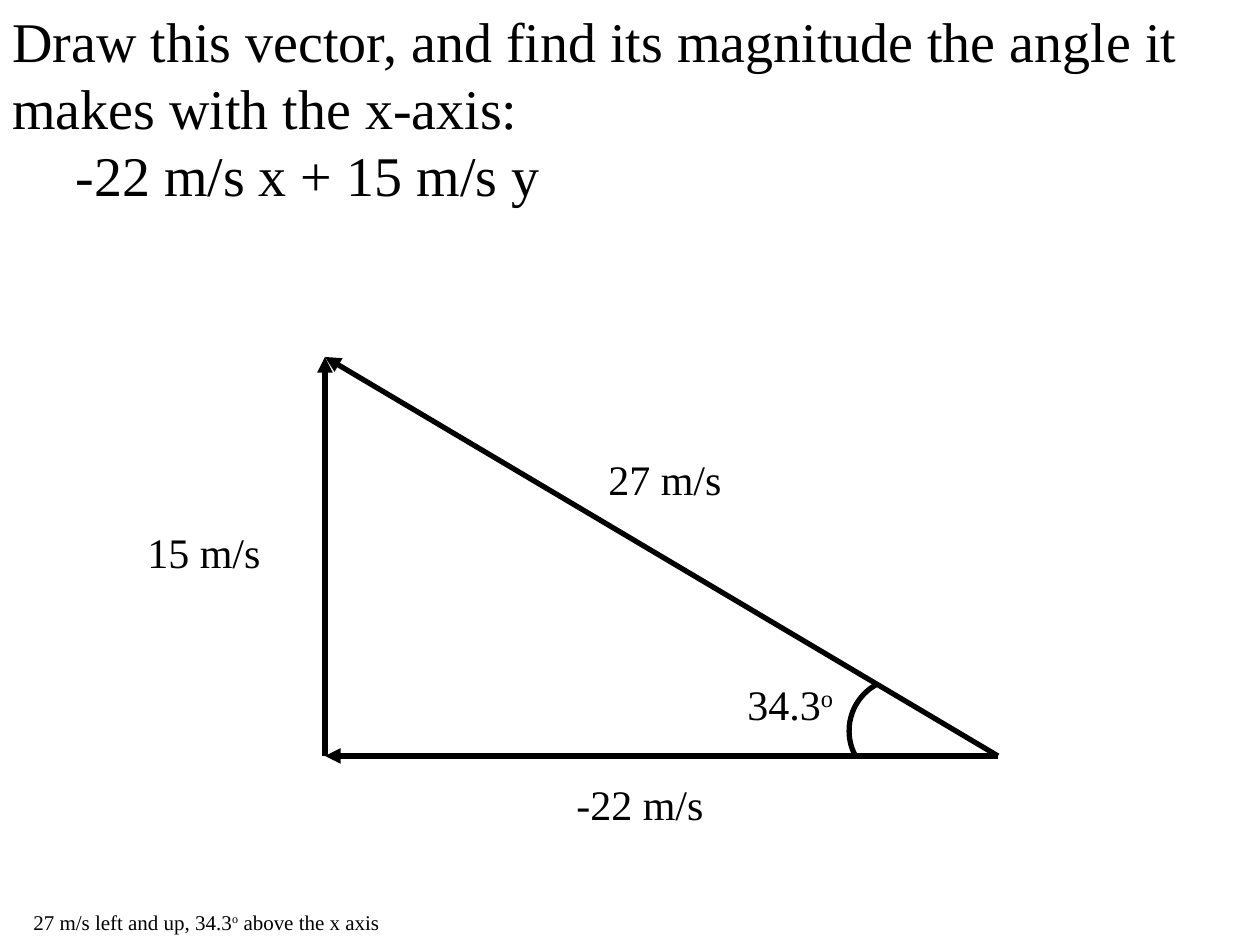
from math import cos, pi, sin

from lxml import etree
from pptx import Presentation, util as u
from pptx.dml.color import RGBColor
from pptx.enum import shapes, text
from pptx.oxml.ns import qn

PX = u.Inches(1) // 126
BLACK = RGBColor(0, 0, 0)
FONT = "Times New Roman"
LINE_WIDTH = u.Pt(3)

# Each paragraph is a list of (words, is superscript).
QUESTION = [
    [("Draw this vector, and find its magnitude the angle it "
      "makes with the x-axis:", False)],
    [("\t-22 m/s x + 15 m/s y", False)],
]
ANSWER = [[("27 m/s left and up, 34.3", False), ("o", True),
           (" above the x axis", False)]]
ANGLE = [[("34.3", False), ("o", True)]]

# (paragraphs, text size, (left, top, width, height), wraps)
TEXTS = [
    (ANSWER, 12, (21, 903, 377, 38), False),
    (QUESTION, 32, (0, 0, 1260, 217), True),
    ([[("-22 m/s", False)]], 24, (564, 772, 163, 63), False),
    ([[("15 m/s", False)]], 24, (135, 520, 139, 63), False),
    ([[("27 m/s", False)]], 24, (596, 447, 139, 63), False),
    (ANGLE, 24, (735, 672, 113, 63), False),
]

START, CORNER, TIP = (998, 756), (325, 756), (325, 357)
ARROWS = [(START, CORNER), (CORNER, TIP), (START, TIP)]

ARC_CENTER, ARC_RADIUS, ARC_TURN = (893, 746), 53, -27.2
ARC_STEPS = 24


def add_text(page, paragraphs, size, place, wraps):
    box = page.shapes.add_textbox(*(v * PX for v in place))
    frame = box.text_frame
    frame.word_wrap = wraps
    frame.auto_size = text.MSO_AUTO_SIZE.SHAPE_TO_FIT_TEXT
    for i, runs in enumerate(paragraphs):
        para = frame.add_paragraph() if i else frame.paragraphs[0]
        for words, superscript in runs:
            span = para.add_run()
            span.text = words
            span.font.name = FONT
            span.font.size = u.Pt(size)
            span.font.color.rgb = BLACK
            if superscript:
                span.font._element.set("baseline", "30000")


def style_line(line):
    line.color.rgb = BLACK
    line.width = LINE_WIDTH


def add_arrow(page, start, end):
    arrow = page.shapes.add_connector(
        shapes.MSO_CONNECTOR.STRAIGHT, *(v * PX for v in start + end))
    style_line(arrow.line)
    etree.SubElement(arrow.line._get_or_add_ln(), qn("a:tailEnd"),
                     type="triangle")
    etree.SubElement(arrow._element.spPr, qn("a:effectLst"))


def add_angle_arc(page):
    """Draw a quarter circle, from top to left, and turn it into the angle."""
    x, y = ARC_CENTER
    angles = [pi / 2 * (1 + i / ARC_STEPS) for i in range(ARC_STEPS + 1)]
    points = [(round((x + ARC_RADIUS * cos(a)) * PX),
               round((y - ARC_RADIUS * sin(a)) * PX)) for a in angles]
    builder = page.shapes.build_freeform(*points[0])
    builder.add_line_segments(points[1:], close=False)
    arc = builder.convert_to_shape()
    arc.rotation = ARC_TURN
    arc.shadow.inherit = False
    arc.fill.background()
    style_line(arc.line)


def main():
    deck = Presentation()
    deck.slide_width, deck.slide_height = 1260 * PX, 945 * PX
    page = deck.slides.add_slide(deck.slide_layouts[6])
    for entry in TEXTS[:2]:
        add_text(page, *entry)
    for start, end in ARROWS:
        add_arrow(page, start, end)
    for entry in TEXTS[2:]:
        add_text(page, *entry)
    add_angle_arc(page)
    deck.save("out.pptx")


if __name__ == "__main__":
    main()
